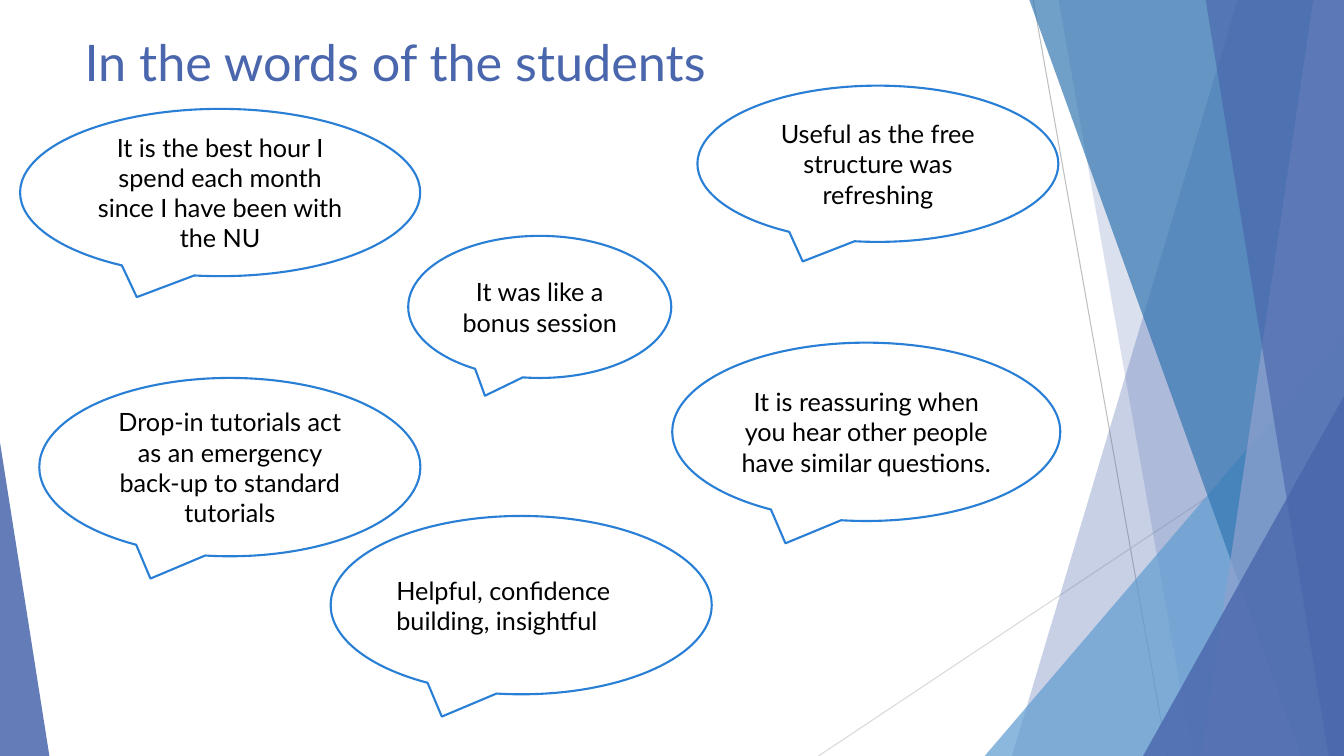
"""Build a slide of student quotes in speech bubbles beside a faceted blue border."""
from lxml import etree
from pptx import Presentation
from pptx import util as u
from pptx.dml.color import RGBColor
from pptx.enum import shapes, text
from pptx.oxml import ns

WIDTH, HEIGHT, TOP = 960, 540, -0.6
FONT = "Lato"
WHITE = RGBColor(0xFF, 0xFF, 0xFF)
BLACK = RGBColor(0, 0, 0)
INDIGO = RGBColor(0x4A, 0x66, 0xAC)
SKY = RGBColor(0x62, 0x9D, 0xD1)
STEEL = RGBColor(0x34, 0x77, 0xB2)
LAVENDER = RGBColor(0x90, 0xA2, 0xCF)
OUTLINE = RGBColor(0x29, 0x7F, 0xD5)
GREY = RGBColor(0xBF, 0xBF, 0xBF)
PALE_GREY = RGBColor(0xD9, 0xD9, 0xD9)

TITLE = "In the words of the students"
CENTER, LEFT = text.PP_ALIGN.CENTER, text.PP_ALIGN.LEFT

# left, top, width, height, alignment, quote
QUOTES = [
    (14.4, 77.8, 285.8, 119.5, CENTER,
     "It is the best hour I spend each month since I have been with the NU"),
    (291.6, 168.5, 187.9, 101.5, CENTER, "It was like a bonus session"),
    (28.1, 270, 272.2, 127.4, CENTER,
     "Drop-in tutorials act as an emergency back-up to standard tutorials"),
    (498.2, 61.2, 257.8, 111.6, CENTER, "Useful as the free structure was refreshing"),
    (480.2, 244.8, 277.2, 127.4, CENTER,
     "It is reassuring when you hear other people have similar questions."),
    (236.2, 368.6, 272.2, 127.4, LEFT, "Helpful, confidence building, insightful"),
]

# x1, y1, x2, y2, colour
RAYS = [(738, 0, 833.8, HEIGHT, GREY), (WIDTH, 290.2, 584.6, HEIGHT, PALE_GREY)]

# "band": left edge at top and at bottom; "peak": left, top, width, apex position
FACETS = [
    ("band", (884.2, 722.9), INDIGO, 30),
    ("band", (756, 851.8), INDIGO, 20),
    ("peak", (703.4, 239.8, 256.6, 1), SKY, 72),
    ("band", (735.1, 929.5), STEEL, 70),
    ("band", (938.2, 858.2), LAVENDER, 70),
    ("band", (861.1, 949), INDIGO, 65),
    ("peak", (816.5, 283, 143.5, 1), INDIGO, 80),
    ("peak", (0, 316.1, 35.3, 0), INDIGO, 85),
]


def points(*values):
    return [u.Pt(v) for v in values]


def add_ray(slide, x1, y1, x2, y2, color):
    c = slide.shapes.add_connector(shapes.MSO_CONNECTOR.STRAIGHT, *points(x1, y1, x2, y2))
    c.line.color.rgb = color
    c.line.width = u.Pt(0.75)
    etree.SubElement(c._element.spPr, ns.qn("a:effectLst"))


def add_band(slide, top_x, bottom_x):
    corners = [(top_x, TOP), (WIDTH, TOP), (WIDTH, HEIGHT), (bottom_x, HEIGHT)]
    start, *rest = [points(*corner) for corner in corners]
    builder = slide.shapes.build_freeform(*start)
    builder.add_line_segments(rest, close=True)
    return builder.convert_to_shape()


def add_peak(slide, left, top, width, apex):
    sp = slide.shapes.add_shape(shapes.MSO_SHAPE.ISOSCELES_TRIANGLE,
                                *points(left, top, width, HEIGHT - top))
    sp.adjustments[0] = apex
    return sp


def add_facet(slide, kind, geometry, color, opacity):
    sp = {"band": add_band, "peak": add_peak}[kind](slide, *geometry)
    sp.shadow.inherit = False
    sp.fill.solid()
    sp.fill.fore_color.rgb = color
    sp.line.fill.background()
    rgb = sp._element.spPr.find(ns.qn("a:solidFill")).find(ns.qn("a:srgbClr"))
    etree.SubElement(rgb, ns.qn("a:alpha"), val=str(opacity * 1000))


def write(sp, words, size, color, align, anchor):
    tf = sp.text_frame
    tf.word_wrap = True
    tf.vertical_anchor = anchor
    p = tf.paragraphs[0]
    p.text = words
    p.alignment = align
    p.font.name = FONT
    p.font.size = u.Pt(size)
    p.font.color.rgb = color


def add_quote(slide, left, top, width, height, align, words):
    sp = slide.shapes.add_shape(shapes.MSO_SHAPE.OVAL_CALLOUT,
                                *points(left, top, width, height))
    sp.shadow.inherit = False
    sp.fill.solid()
    sp.fill.fore_color.rgb = WHITE
    sp.line.color.rgb = OUTLINE
    sp.line.width = u.Pt(1.5)
    write(sp, words, 18, BLACK, align, text.MSO_ANCHOR.MIDDLE)


def main():
    prs = Presentation()
    prs.slide_width, prs.slide_height = points(WIDTH, HEIGHT)
    slide = prs.slides.add_slide(prs.slide_layouts[6])
    for ray in RAYS:
        add_ray(slide, *ray)
    for facet in FACETS:
        add_facet(slide, *facet)
    title = slide.shapes.add_textbox(*points(53.3, 18.7, 671, 59.8))
    write(title, TITLE, 36, INDIGO, LEFT, text.MSO_ANCHOR.TOP)
    for quote in QUOTES:
        add_quote(slide, *quote)
    prs.save("out.pptx")


if __name__ == "__main__":
    main()
